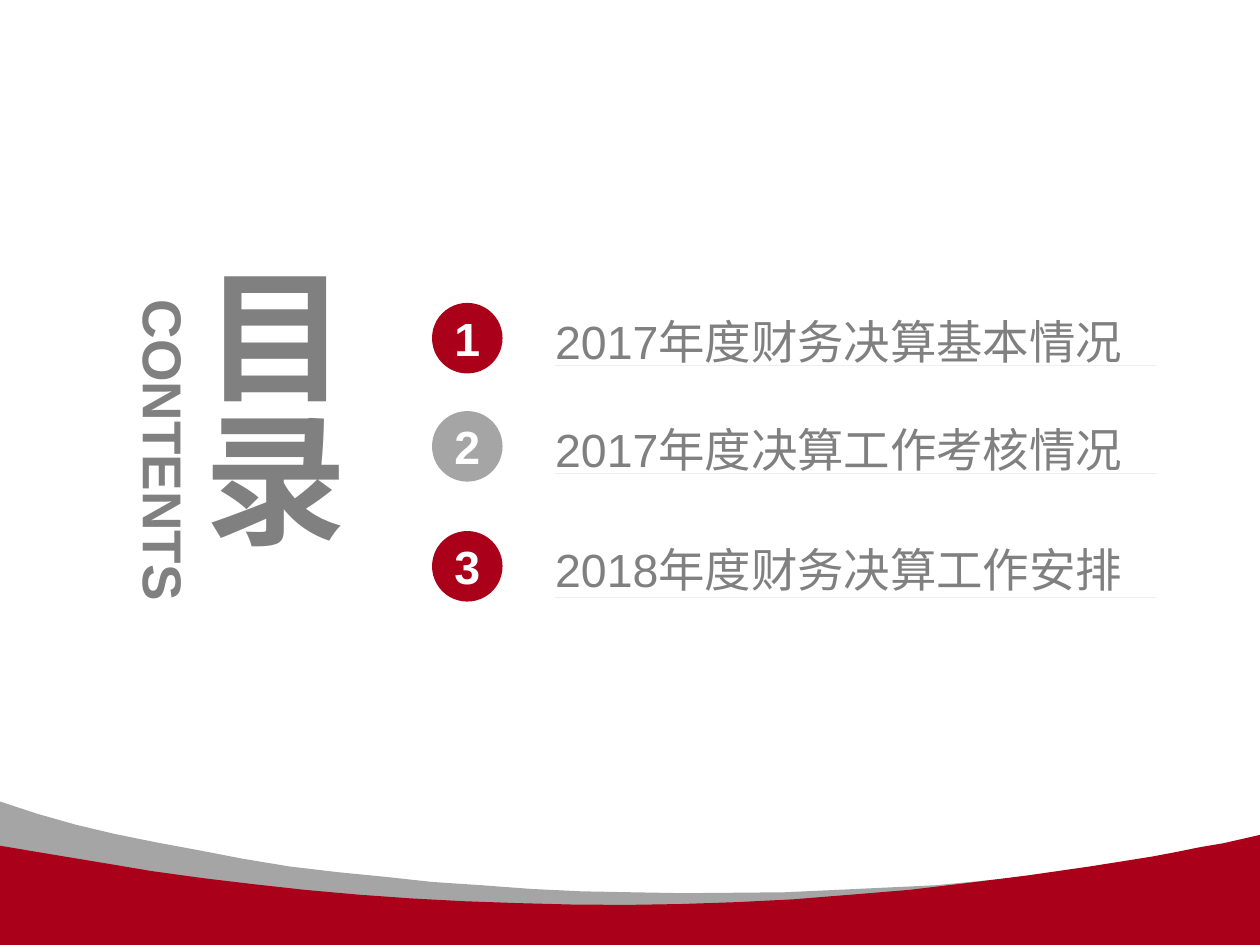
import pptx
import pptx.dml.color
import pptx.enum.shapes
import pptx.enum.text
import pptx.util
from pptx.util import Cm

RED = pptx.dml.color.RGBColor(0xAB, 0x00, 0x19)
SILVER = pptx.dml.color.RGBColor(0xA5, 0xA5, 0xA5)
GREY = pptx.dml.color.RGBColor(0x80, 0x80, 0x80)
WHITE = pptx.dml.color.RGBColor(0xFF, 0xFF, 0xFF)

SLIDE_WIDTH, SLIDE_HEIGHT = 26.8, 20.09
ENTRY_LEFT, ENTRY_WIDTH = 11.81, 12.79
BADGE_LEFT, BADGE_SIZE = 9.19, 1.5

# Number, title, badge colour, badge top, title top, underline height (cm)
ENTRIES = [
    ("1", "2017年度财务决算基本情况", RED, 6.44, 6.38, 7.77),
    ("2", "2017年度决算工作考核情况", SILVER, 8.74, 8.67, 10.07),
    ("3", "2018年度财务决算工作安排", RED, 11.29, 11.15, 12.7),
]

# Upper edges of the two waves, left to right (cm)
SILVER_CREST = [
    (0, 17.04), (0.79, 17.3), (1.6, 17.53), (2.44, 17.73), (3.33, 17.91),
    (4.24, 18.08), (5.18, 18.26), (6.15, 18.42), (7.16, 18.54),
    (8.18, 18.64), (9.19, 18.75), (10.24, 18.82), (11.3, 18.9),
    (12.37, 18.95), (13.44, 18.97), (14.53, 18.99), (15.62, 18.98),
    (16.69, 18.97), (17.78, 18.92), (18.85, 18.87), (19.91, 18.82),
    (20.96, 18.72), (22, 18.62), (23.01, 18.49), (24, 18.36),
    (24.97, 18.21), (25.91, 18.03), (SLIDE_WIDTH, 17.83),
]
RED_CREST = [
    (0, 17.98), (1.07, 18.16), (2.16, 18.34), (3.23, 18.52), (4.32, 18.67),
    (5.41, 18.8), (6.5, 18.92), (7.62, 19.02), (8.74, 19.1), (9.86, 19.16),
    (11, 19.2), (12.14, 19.23), (13.31, 19.24), (14.48, 19.22),
    (15.67, 19.18), (16.87, 19.12), (18.11, 19.02), (19.33, 18.92),
    (20.6, 18.77), (21.87, 18.61), (23.19, 18.42), (24.51, 18.21),
    (25.04, 18.11), (25.53, 18.01), (26.01, 17.93), (SLIDE_WIDTH, 17.75),
]


def write(shape, text, size, color=GREY, bold=False, align="CENTER",
          anchor="MIDDLE", spacing=1.0):
    frame = shape.text_frame
    frame.word_wrap = True
    frame.auto_size = pptx.enum.text.MSO_AUTO_SIZE.NONE
    frame.vertical_anchor = pptx.enum.text.MSO_ANCHOR[anchor]
    frame.margin_left = frame.margin_right = 0
    frame.margin_top = frame.margin_bottom = 0
    paragraph = frame.paragraphs[0]
    paragraph.alignment = pptx.enum.text.PP_ALIGN[align]
    paragraph.line_spacing = spacing
    run = paragraph.add_run()
    run.text = text
    run.font.name = "Arial"
    run.font.size = pptx.util.Pt(size)
    run.font.bold = bold
    run.font.color.rgb = color


def paint(shape, color):
    shape.shadow.inherit = False
    shape.fill.solid()
    shape.fill.fore_color.rgb = color
    shape.line.fill.background()


def add_label(slide, left, top, width, height, text, size, **style):
    label = slide.shapes.add_textbox(Cm(left), Cm(top), Cm(width), Cm(height))
    write(label, text, size, **style)
    return label


def add_badge(slide, number, color, top):
    badge = slide.shapes.add_shape(
        pptx.enum.shapes.MSO_SHAPE.OVAL,
        Cm(BADGE_LEFT), Cm(top), Cm(BADGE_SIZE), Cm(BADGE_SIZE))
    paint(badge, color)
    write(badge, number, 28, color=WHITE, bold=True)


def add_title(slide, title, top, underline):
    """Outline a title by its hairline underline and its top left corner."""
    left, right = Cm(ENTRY_LEFT), Cm(ENTRY_LEFT + ENTRY_WIDTH)
    builder = slide.shapes.build_freeform(left, Cm(underline))
    builder.add_line_segments([(right, Cm(underline)), (left, Cm(underline))])
    builder.move_to(left, Cm(top))
    builder.add_line_segments([(left, Cm(top))])
    entry = builder.convert_to_shape()
    paint(entry, GREY)
    write(entry, title, 28, align="LEFT", spacing=1.3)


def add_wave(slide, crest, color):
    """Fill the area between a crest and the bottom of the slide."""
    outline = crest + [(SLIDE_WIDTH, SLIDE_HEIGHT), (0, SLIDE_HEIGHT)]
    points = [(Cm(x), Cm(y)) for x, y in outline]
    builder = slide.shapes.build_freeform(*points[0])
    builder.add_line_segments(points[1:], close=True)
    paint(builder.convert_to_shape(), color)


def add_heading(slide):
    heading = add_label(slide, 3.93, 5.63, 3.68, 7.9, "目录", 86.2,
                        bold=True, align="LEFT")
    heading.text_frame._txBody.bodyPr.set("vert", "eaVert")
    contents = add_label(slide, 0.05, 8.86, 6.88, 1.42, "CONTENTS", 33,
                         bold=True, anchor="TOP")
    contents.rotation = 90


def main():
    deck = pptx.Presentation()
    deck.slide_width, deck.slide_height = Cm(SLIDE_WIDTH), Cm(SLIDE_HEIGHT)
    slide = deck.slides.add_slide(deck.slide_layouts[6])
    add_heading(slide)
    for number, title, color, badge_top, title_top, underline in ENTRIES:
        add_badge(slide, number, color, badge_top)
        add_title(slide, title, title_top, underline)
    add_wave(slide, SILVER_CREST, SILVER)
    add_wave(slide, RED_CREST, RED)
    deck.save("out.pptx")


if __name__ == "__main__":
    main()
